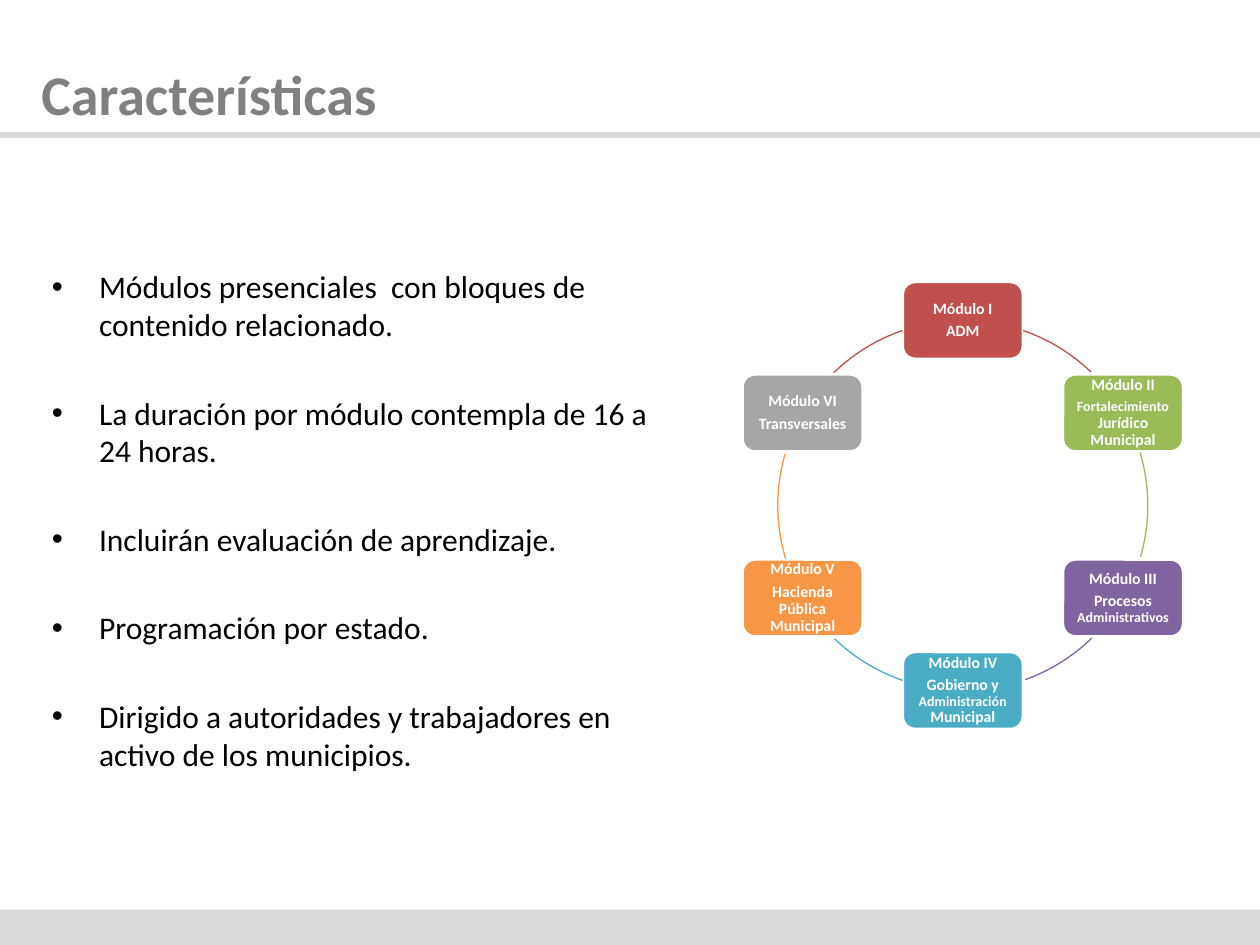
from dataclasses import dataclass
from math import cos, radians, sin

from lxml.etree import SubElement
from pptx import Presentation
from pptx.dml.color import RGBColor
from pptx.enum.shapes import MSO_CONNECTOR as Connector
from pptx.enum.shapes import MSO_SHAPE as Preset
from pptx.enum.text import MSO_ANCHOR as Anchor
from pptx.enum.text import MSO_AUTO_SIZE as AutoSize
from pptx.enum.text import PP_ALIGN as Align
from pptx.oxml.ns import qn
from pptx.util import Cm, Pt

PAGE_WIDTH, PAGE_HEIGHT = 25.4, 19.05
RING_X, RING_Y, RING_RADIUS = 19.41, 10.19, 3.73
BOX_WIDTH, BOX_HEIGHT = 2.44, 1.57
GREY, WHITE = "D9D9D9", "FFFFFF"


@dataclass
class Module:
    name: str
    topic: list[tuple[str, int]]  # text and size in points
    fill: str
    arc_color: str
    arc: tuple[float, float]  # clockwise degrees from the right


MODULES = [
    Module("Módulo I", [("ADM", 9)], "C0504D", "C0504D", (289, 314.2)),
    Module("Módulo II", [("Fortalecimiento ", 8), ("Jurídico Municipal", 9)],
           "9BBB59", "9BBB59", (343.3, 16.7)),
    Module("Módulo III", [("Procesos ", 9), ("Administrativos", 8)],
           "8064A2", "8064A2", (45.8, 71)),
    Module("Módulo IV", [("Gobierno y ", 9), ("Administración ", 8), ("Municipal", 9)],
           "4BACC6", "4BACC6", (109, 134.2)),
    Module("Módulo V", [("Hacienda Pública Municipal", 9)],
           "F79646", "F79646", (163.3, 196.7)),
    Module("Módulo VI", [("Transversales", 9)], "A6A6A6", "C0504D", (225.8, 251)),
]

FEATURES = [
    "Módulos presenciales  con bloques de contenido relacionado.",
    "La duración por módulo contempla de 16 a 24 horas.",
    "Incluirán evaluación de aprendizaje.",
    "Programación por estado.",
    "Dirigido a autoridades y trabajadores en activo de los municipios.",
]


def color(value: str) -> RGBColor:
    return RGBColor.from_string(value)


def set_all(target, values: dict) -> None:
    for name, value in values.items():
        setattr(target, name, value)


def add_span(para, text: str, size: int, tint: str, bold: bool = False) -> None:
    span = para.add_run()
    span.text = text
    set_all(span.font, {"name": "Calibri", "size": Pt(size), "bold": bold})
    span.font.color.rgb = color(tint)


def place(shape, left: float, top: float, width: float, height: float) -> None:
    set_all(shape, {"left": Cm(left), "top": Cm(top),
                    "width": Cm(width), "height": Cm(height)})


def add_frame(page) -> None:
    """Draw the rule under the title and the band at the foot."""
    band = page.shapes.add_shape(Preset.RECTANGLE, 0, Cm(18.34),
                                 Cm(PAGE_WIDTH), Cm(PAGE_HEIGHT - 18.34))
    band.shadow.inherit = False
    band.fill.solid()
    band.fill.fore_color.rgb = color(GREY)
    band.line.fill.background()
    rule = page.shapes.add_connector(Connector.STRAIGHT, 0, Cm(2.72),
                                     Cm(PAGE_WIDTH), Cm(2.72))
    rule.line.color.rgb = color(GREY)
    rule.line.width = Pt(3)
    SubElement(rule._element.spPr, qn("a:effectLst"))


def fill_title(title) -> None:
    place(title, 0.58, 1.09, 22.86, 1.57)
    set_all(title.text_frame, {"vertical_anchor": Anchor.MIDDLE,
                               "auto_size": AutoSize.NONE})
    para = title.text_frame.paragraphs[0]
    para.alignment = Align.LEFT
    add_span(para, "Características", 32, "808080", bold=True)


def fill_features(body) -> None:
    place(body, 0.79, 5.26, 13.18, 9.7)
    frame = body.text_frame
    frame.auto_size = AutoSize.NONE
    for index, feature in enumerate(FEATURES):
        para = frame.add_paragraph() if index else frame.paragraphs[0]
        para.space_before = Pt(29 if index else 0)
        set_all(para._p.get_or_add_pPr(), {"marL": Cm(0.79), "indent": Cm(-0.56)})
        add_span(para, feature, 18, "000000")


def add_arc(page, module: Module) -> None:
    arc = page.shapes.add_shape(Preset.ARC, Cm(RING_X - RING_RADIUS),
                                Cm(RING_Y - RING_RADIUS),
                                Cm(2 * RING_RADIUS), Cm(2 * RING_RADIUS))
    arc.shadow.inherit = False
    for index, angle in enumerate(module.arc):
        arc.adjustments[index] = angle * 0.6  # 60000 units a degree, over 100000
    arc.fill.background()
    arc.line.color.rgb = color(module.arc_color)
    arc.line.width = Pt(0.75)


def add_module_box(page, module: Module, angle: float) -> None:
    left = RING_X + RING_RADIUS * cos(radians(angle)) - BOX_WIDTH / 2
    top = RING_Y + RING_RADIUS * sin(radians(angle)) - BOX_HEIGHT / 2
    box = page.shapes.add_shape(Preset.ROUNDED_RECTANGLE, Cm(left), Cm(top),
                                Cm(BOX_WIDTH), Cm(BOX_HEIGHT))
    box.shadow.inherit = False
    box.fill.solid()
    box.fill.fore_color.rgb = color(module.fill)
    box.line.color.rgb = color(WHITE)
    box.line.width = Pt(2)
    frame = box.text_frame
    sides = ("left", "right", "top", "bottom")
    set_all(frame, {f"margin_{side}": Cm(0.1) for side in sides})
    set_all(frame, {"word_wrap": True, "vertical_anchor": Anchor.MIDDLE})
    heading, topic = frame.paragraphs[0], frame.add_paragraph()
    for para in (heading, topic):
        set_all(para, {"alignment": Align.CENTER, "line_spacing": 0.9})
    heading.space_after = Pt(3.15)
    add_span(heading, module.name, 9, WHITE, bold=True)
    for text, size in module.topic:
        add_span(topic, text, size, WHITE, bold=True)


def main() -> None:
    deck = Presentation()
    set_all(deck, {"slide_width": Cm(PAGE_WIDTH), "slide_height": Cm(PAGE_HEIGHT)})
    page = deck.slides.add_slide(deck.slide_layouts[1])
    add_frame(page)
    for index, module in enumerate(MODULES):
        add_module_box(page, module, -90 + index * 360 / len(MODULES))
        add_arc(page, module)
    fill_features(page.placeholders[1])
    fill_title(page.shapes.title)
    deck.save("out.pptx")


if __name__ == "__main__":
    main()
